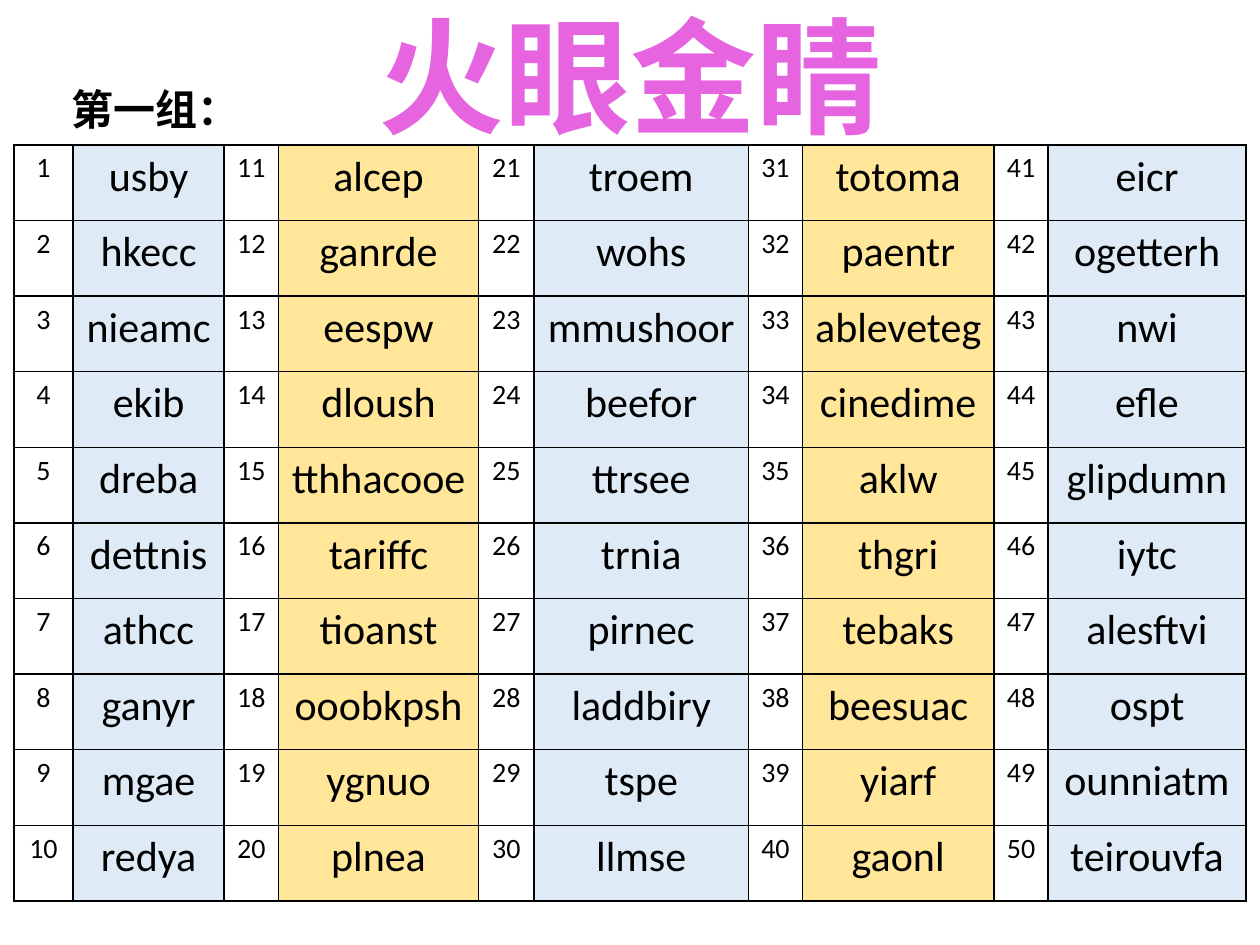
from lxml import etree
from pptx import Presentation
from pptx.dml.color import RGBColor
from pptx.enum.text import MSO_ANCHOR, PP_ALIGN
from pptx.oxml.ns import qn
from pptx.util import Inches, Pt

CENTER, LEFT = PP_ALIGN.CENTER, PP_ALIGN.LEFT
TOP = MSO_ANCHOR.TOP
FONT = "Calibri"
COLORS = {"black": "000000", "title": "E664E0", "blue": "DEEBF7", "yellow": "FFE699"}

COLUMN_WIDTHS = [0.47, 1.2, 0.43, 1.59, 0.44, 1.7, 0.43, 1.52, 0.43, 1.57]
ROW_HEIGHT = 0.6
WORD_GROUPS = [
    "usby hkecc nieamc ekib dreba dettnis athcc ganyr mgae redya",
    "alcep ganrde eespw dloush tthhacooe tariffc tioanst ooobkpsh ygnuo plnea",
    "troem wohs mmushoor beefor ttrsee trnia pirnec laddbiry tspe llmse",
    "totoma paentr ableveteg cinedime aklw thgri tebaks beesuac yiarf gaonl",
    "eicr ogetterh nwi efle glipdumn iytc alesftvi ospt ounniatm teirouvfa",
]
GROUP_SIZE = 10


def set_text(frame, text, size, color="black", bold=False, align=CENTER, wrap=True):
    frame.word_wrap = wrap
    paragraph = frame.paragraphs[0]
    paragraph.alignment = align
    run = paragraph.add_run()
    run.text = text
    run.font.name = FONT
    run.font.size = Pt(size)
    run.font.bold = bold
    run.font.color.rgb = RGBColor.from_string(COLORS[color])


def set_borders(cell):
    """Draw a thin black line on all four sides, placed ahead of the cell's fill."""
    properties = cell._tc.get_or_add_tcPr()
    for index, side in enumerate(("a:lnL", "a:lnR", "a:lnT", "a:lnB")):
        line = etree.Element(qn(side), w=str(Pt(1)))
        fill = etree.SubElement(line, qn("a:solidFill"))
        etree.SubElement(fill, qn("a:srgbClr"), val=COLORS["black"])
        properties.insert(index, line)


presentation = Presentation()
presentation.slide_width, presentation.slide_height = Inches(10), Inches(7.5)
slide = presentation.slides.add_slide(presentation.slide_layouts[5])

# Word table: each group is a number column followed by a coloured word column
table = slide.shapes.add_table(
    GROUP_SIZE, len(COLUMN_WIDTHS), Inches(0.11), Inches(1.15),
    Inches(sum(COLUMN_WIDTHS)), Inches(ROW_HEIGHT * GROUP_SIZE)).table
table.first_row = table.horz_banding = False
for column, width in zip(table.columns, COLUMN_WIDTHS):
    column.width = Inches(width)
for row in table.rows:
    row.height = Inches(ROW_HEIGHT)

for group, words in enumerate(WORD_GROUPS):
    word_color = COLORS["yellow" if group % 2 else "blue"]
    for row, word in enumerate(words.split()):
        number = group * GROUP_SIZE + row + 1
        number_cell = table.cell(row, 2 * group)
        word_cell = table.cell(row, 2 * group + 1)
        set_text(number_cell.text_frame, str(number), 16)
        set_text(word_cell.text_frame, word, 24)
        number_cell.fill.background()
        word_cell.fill.solid()
        word_cell.fill.fore_color.rgb = RGBColor.from_string(word_color)
        for cell in (number_cell, word_cell):
            cell.margin_left = cell.margin_right = Inches(0.05)
            set_borders(cell)

# Headings
group_label = slide.shapes.add_textbox(Inches(0.47), Inches(0.61), Inches(2.84), Inches(0.5))
set_text(group_label.text_frame, "第一组：", 24, bold=True, align=LEFT)

title = slide.shapes.title
title.left, title.top = Inches(2.89), Inches(-0.06)
title.width, title.height = Inches(4.22), Inches(1.3)
title.text_frame.vertical_anchor = TOP
set_text(title.text_frame, "火眼金睛", 72, color="title", bold=True, wrap=False)

presentation.save("out.pptx")
